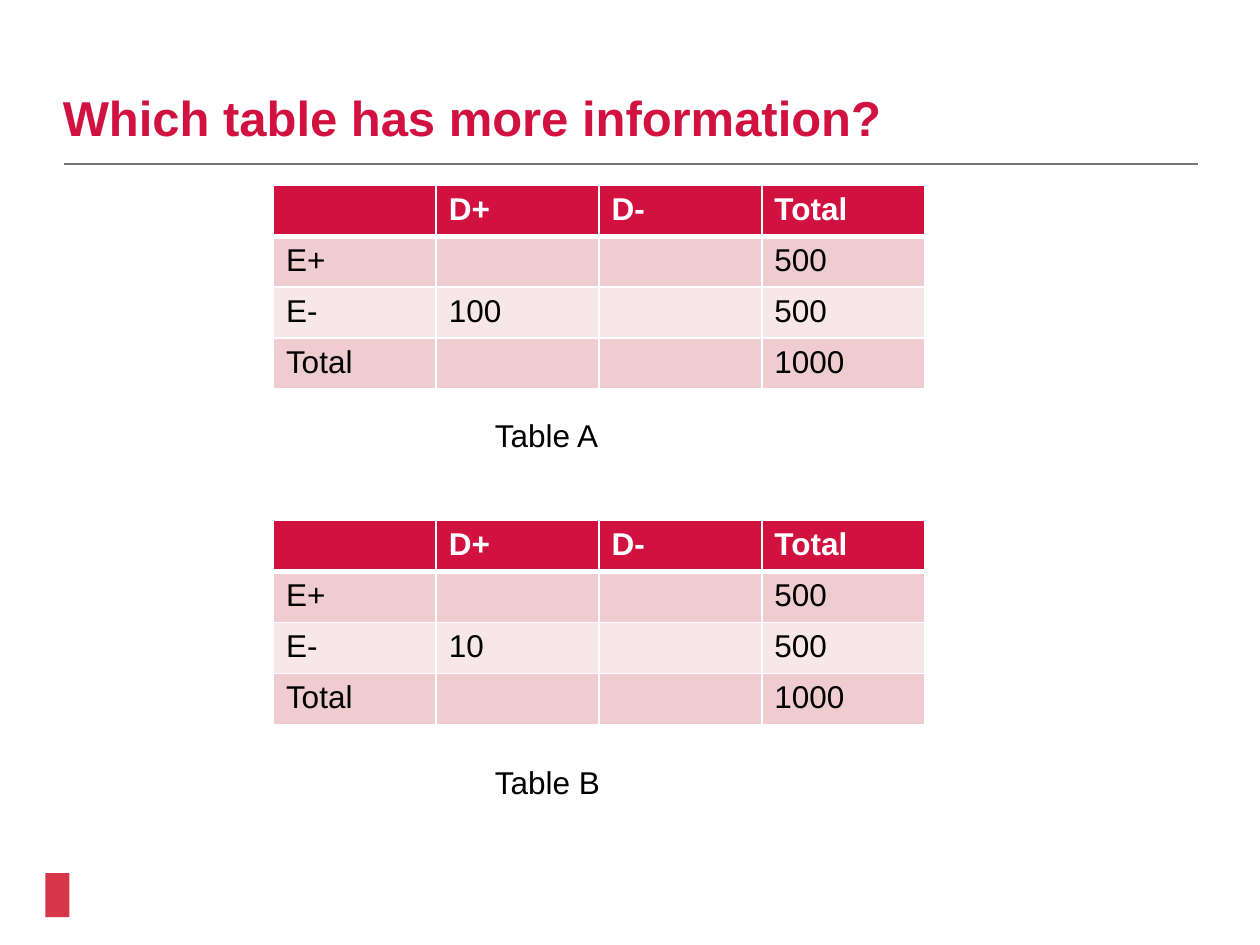
from lxml.etree import SubElement
from pptx import Presentation
from pptx.dml.color import RGBColor
from pptx.enum.shapes import MSO_CONNECTOR, MSO_SHAPE
from pptx.enum.text import MSO_ANCHOR
from pptx.oxml.ns import qn
from pptx.util import Inches, Pt

RED = RGBColor(0xD1, 0x12, 0x41)
EMBLEM_RED = RGBColor(0xD7, 0x36, 0x48)
GRAY = RGBColor(0x76, 0x76, 0x76)
PINK = RGBColor(0xEE, 0xCC, 0xCF)
PALE_PINK = RGBColor(0xF7, 0xE7, 0xE9)
WHITE = RGBColor(0xFF, 0xFF, 0xFF)
BLACK = RGBColor(0, 0, 0)

TABLE_LEFT, TABLE_WIDTH, TABLE_HEIGHT = 2.17, 5.17, 1.62
CAPTION_LEFT, CAPTION_WIDTH, CAPTION_HEIGHT = 3.83, 2.58, 0.4


def add_run(paragraph, text, size, color, bold=False):
    """Add one formatted run to a paragraph."""
    run = paragraph.add_run()
    run.text = text
    run.font.name = "Arial"
    run.font.size = Pt(size)
    run.font.bold = bold
    run.font.color.rgb = color


def add_text(slide, box, text, size, color, bold=False, anchor=MSO_ANCHOR.TOP, spacing=1.0):
    """Add a wrapped text box holding one paragraph."""
    frame = slide.shapes.add_textbox(*map(Inches, box)).text_frame
    frame.word_wrap = True
    frame.vertical_anchor = anchor
    paragraph = frame.paragraphs[0]
    paragraph.line_spacing = spacing
    add_run(paragraph, text, size, color, bold)


def add_rule(slide, left, right, top):
    """Add the thin horizontal line below the title."""
    line = slide.shapes.add_connector(
        MSO_CONNECTOR.STRAIGHT, Inches(left), Inches(top), Inches(right), Inches(top))
    line.line.color.rgb = GRAY
    line.line.width = Pt(1)
    SubElement(line._element.spPr, qn("a:effectLst"))


def add_emblem(slide, box):
    """Add a plain block in the emblem's place."""
    shape = slide.shapes.add_shape(MSO_SHAPE.RECTANGLE, *map(Inches, box))
    shape.shadow.inherit = False
    shape.fill.solid()
    shape.fill.fore_color.rgb = EMBLEM_RED
    shape.line.fill.background()


def set_borders(cell, top, bottom):
    """Give a cell white borders, with top and bottom widths in points."""
    properties = cell._tc.get_or_add_tcPr()
    for side, width in (("lnL", 1), ("lnR", 1), ("lnT", top), ("lnB", bottom)):
        border = SubElement(properties, qn(f"a:{side}"), w=str(Pt(width)))
        fill = SubElement(border, qn("a:solidFill"))
        SubElement(fill, qn("a:srgbClr"), val=str(WHITE))


def add_count_table(slide, top, unexposed_cases):
    """Add an exposure by disease table with its known counts."""
    rows = [
        ("", "D+", "D-", "Total"),
        ("E+", "", "", "500"),
        ("E-", unexposed_cases, "", "500"),
        ("Total", "", "", "1000"),
    ]
    box = (TABLE_LEFT, top, TABLE_WIDTH, TABLE_HEIGHT)
    table = slide.shapes.add_table(len(rows), len(rows[0]), *map(Inches, box)).table
    for row_index, row in enumerate(rows):
        header = row_index == 0
        row_fill = RED if header else PINK if row_index % 2 else PALE_PINK
        for column_index, text in enumerate(row):
            cell = table.cell(row_index, column_index)
            set_borders(cell, 3 if row_index == 1 else 1, 3 if header else 1)
            cell.fill.solid()
            cell.fill.fore_color.rgb = row_fill
            if text:
                add_run(cell.text_frame.paragraphs[0], text, 18,
                        WHITE if header else BLACK, header)


def main():
    """Build and save the slide."""
    presentation = Presentation()
    presentation.slide_width = Inches(10)
    presentation.slide_height = Inches(7.5)
    slide = presentation.slides.add_slide(presentation.slide_layouts[6])
    add_emblem(slide, (0.36, 6.93, 0.19, 0.35))
    add_rule(slide, 0.51, 9.51, 1.3)
    add_text(slide, (0.4, 0.36, 9.22, 0.86), "Which table has more information?",
             28, RED, True, MSO_ANCHOR.BOTTOM, 0.9)
    for table_top, cases, caption_top, caption in (
            (1.47, "100", 3.25, "Table A"), (4.13, "10", 6.01, "Table B")):
        add_count_table(slide, table_top, cases)
        add_text(slide, (CAPTION_LEFT, caption_top, CAPTION_WIDTH, CAPTION_HEIGHT),
                 caption, 18, BLACK)
    presentation.save("out.pptx")


if __name__ == "__main__":
    main()
